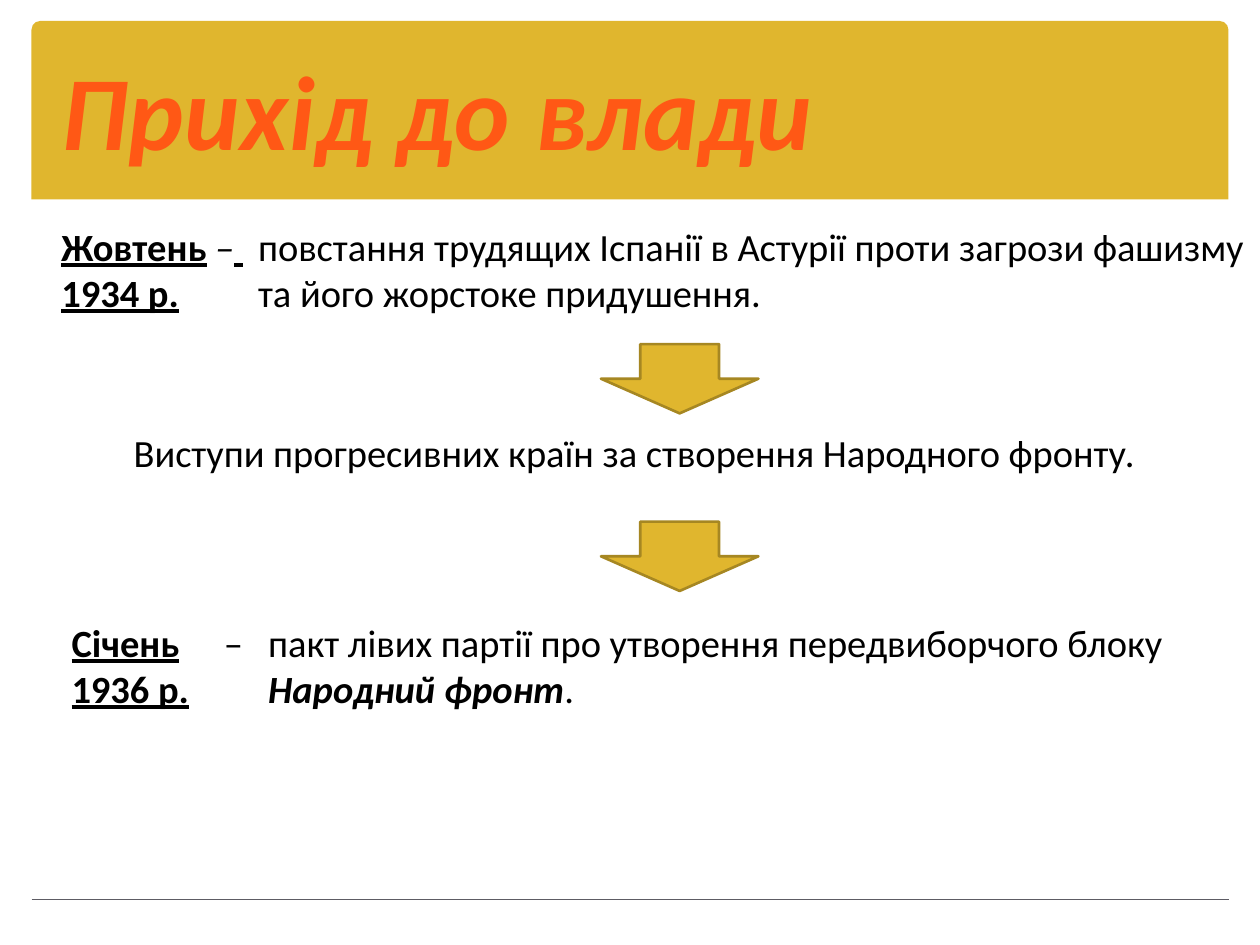
from dataclasses import dataclass
from lxml.etree import SubElement
from pptx import Presentation
from pptx.dml.color import RGBColor
from pptx.enum.shapes import MSO_CONNECTOR, MSO_SHAPE
from pptx.enum.text import PP_ALIGN
from pptx.oxml.ns import qn
from pptx.util import Pt


@dataclass
class Theme:
    font: str = "Calibri"
    gold: RGBColor = RGBColor(0xE0, 0xB6, 0x2E)
    edge: RGBColor = RGBColor(0xA6, 0x87, 0x22)
    rule: RGBColor = RGBColor(0x5D, 0x5C, 0x64)
    title: RGBColor = RGBColor(0xFF, 0x58, 0x15)
    ink: RGBColor = RGBColor(0, 0, 0)
    head: int = 60
    body: int = 22


theme = Theme()
deck = Presentation()
deck.slide_width, deck.slide_height = Pt(720), Pt(540)
slide = deck.slides.add_slide(deck.slide_layouts[6])
shapes = slide.shapes


def add_text(left, top, width, height, lines, size=theme.body, color=theme.ink, tab=None):
    box = shapes.add_textbox(Pt(left), Pt(top), Pt(width), Pt(height))
    frame = box.text_frame
    frame.word_wrap = True
    for i, line in enumerate(lines):
        para = frame.add_paragraph() if i else frame.paragraphs[0]
        if tab:
            tabs = SubElement(para._p.get_or_add_pPr(), qn("a:tabLst"))
            SubElement(tabs, qn("a:tab"), pos=str(Pt(tab)), algn="l")
        for words, style in line:
            run = para.add_run()
            run.text = words
            font = run.font
            font.name, font.size = theme.font, Pt(size)
            font.color.rgb = color
            font.bold = "b" in style
            font.italic = "i" in style
            font.underline = "u" in style
    return frame


def add_block(kind, left, top, width, height):
    block = shapes.add_shape(kind, Pt(left), Pt(top), Pt(width), Pt(height))
    block.shadow.inherit = False
    block.fill.solid()
    block.fill.fore_color.rgb = theme.gold
    return block


band = add_block(MSO_SHAPE.ROUND_2_SAME_RECTANGLE, 18, 12, 684, 102)
band.adjustments[0] = 0.05
band.adjustments[1] = 0
band.line.fill.background()

rule = shapes.add_connector(MSO_CONNECTOR.STRAIGHT, Pt(18), Pt(514), Pt(702), Pt(514))
rule.line.color.rgb = theme.rule
rule.line.width = Pt(1)
SubElement(rule._element.spPr, qn("a:effectLst"))

title = add_text(28, 22.3, 631.5, 80, [[("Прихід до влади", "bi")]], theme.head, theme.title)
title.paragraphs[0].runs[0].font._element.set("spc", "50")

events = [
    (28, 123.8,
     [[("Жовтень", "bu"), (" ", "b"), ("–", "i"), (" ", "bu")], [("1934 р.", "bu")]],
     [[("повстання трудящих Іспанії в Астурії проти загрози фашизму "
        "та його жорстоке придушення.", "")]]),
    (33.8, 350,
     [[("Січень", "bu"), ("\t–", "")], [("1936 р.", "bu")]],
     [[("пакт лівих партії про утворення передвиборчого блоку", "")],
      [("Народний фронт", "bi"), (".", "")]]),
]
for left, top, date, event in events:
    add_text(left, top, 135.4, 60.5, date, tab=87)
    add_text(left + 112.4, top, 579.6 - (left - 28), 60.5, event)

for top in (196.6, 298.1):
    arrow = add_block(MSO_SHAPE.DOWN_ARROW, 343.4, top, 90, 39.6)
    arrow.line.color.rgb = theme.edge
    arrow.line.width = Pt(1.5)

front = add_text(22.3, 241.9, 680.4, 33.8,
                 [[("Виступи прогресивних країн за створення Народного фронту.", "")]])
front.paragraphs[0].alignment = PP_ALIGN.CENTER

deck.save("out.pptx")
